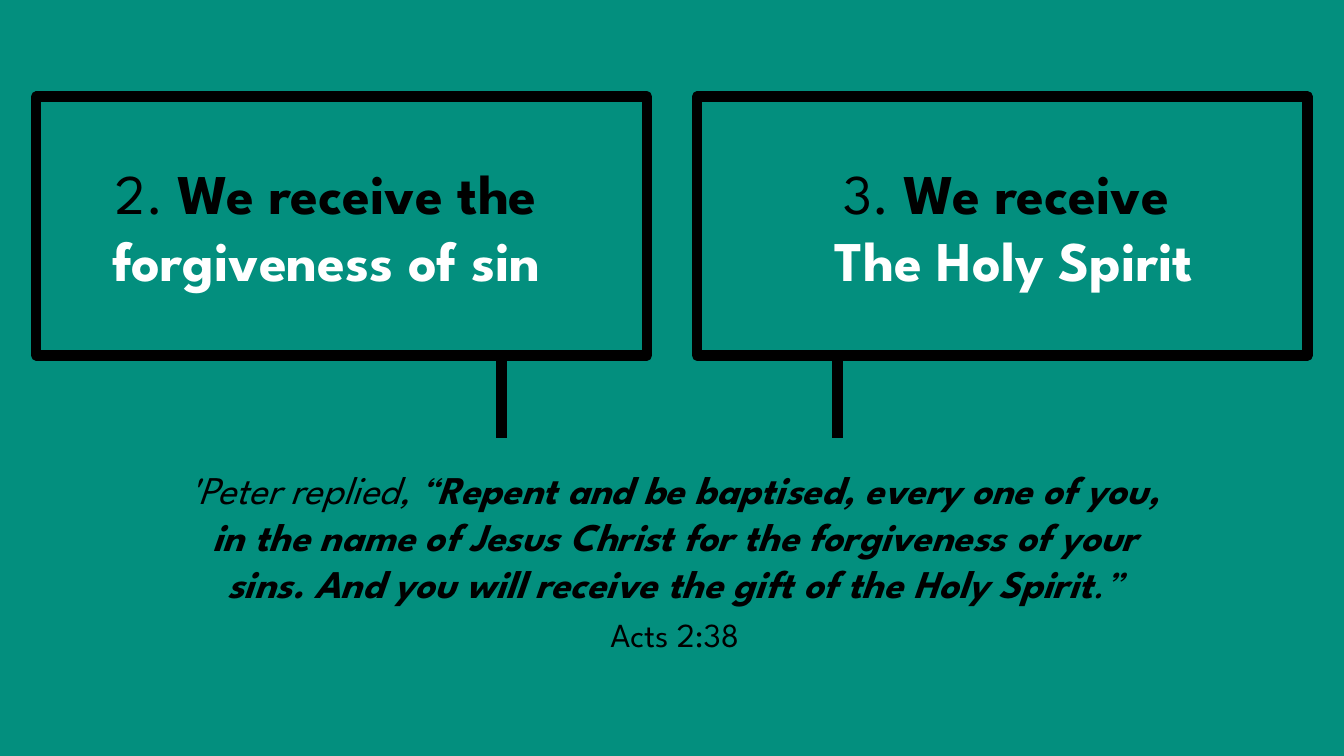
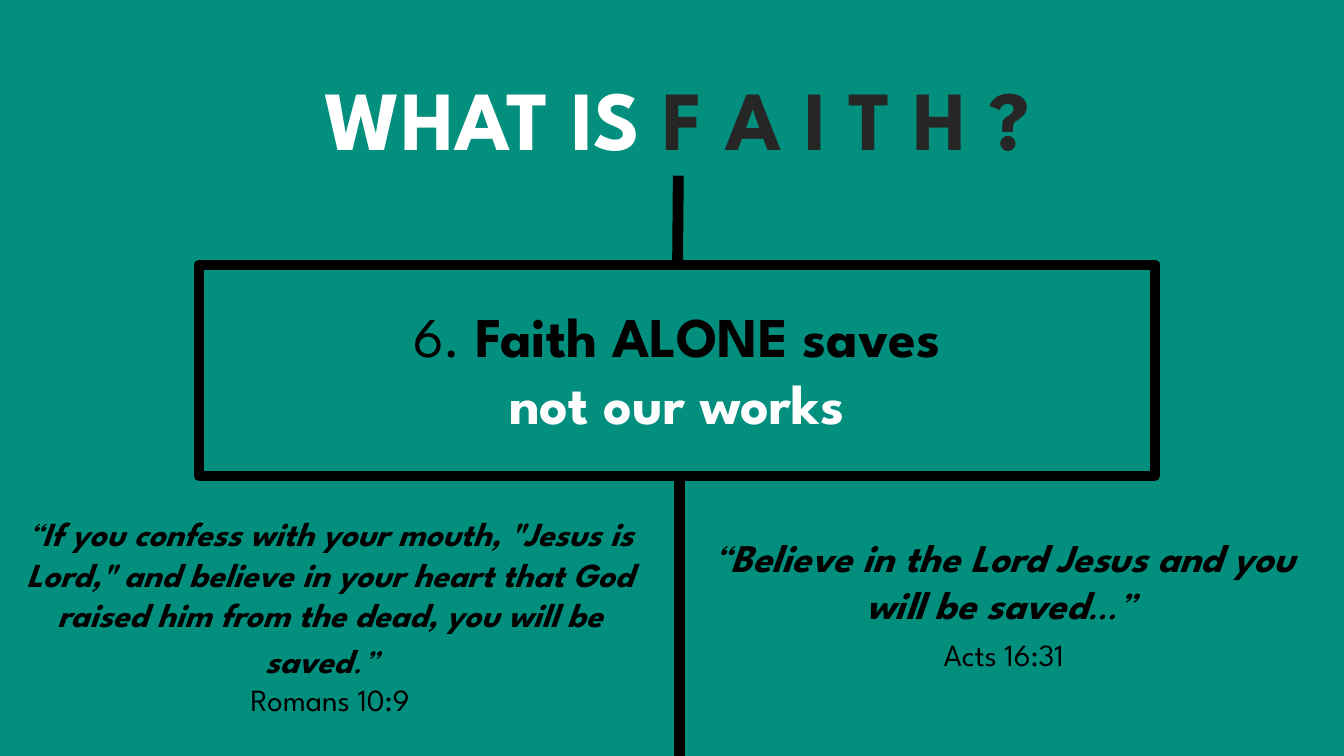
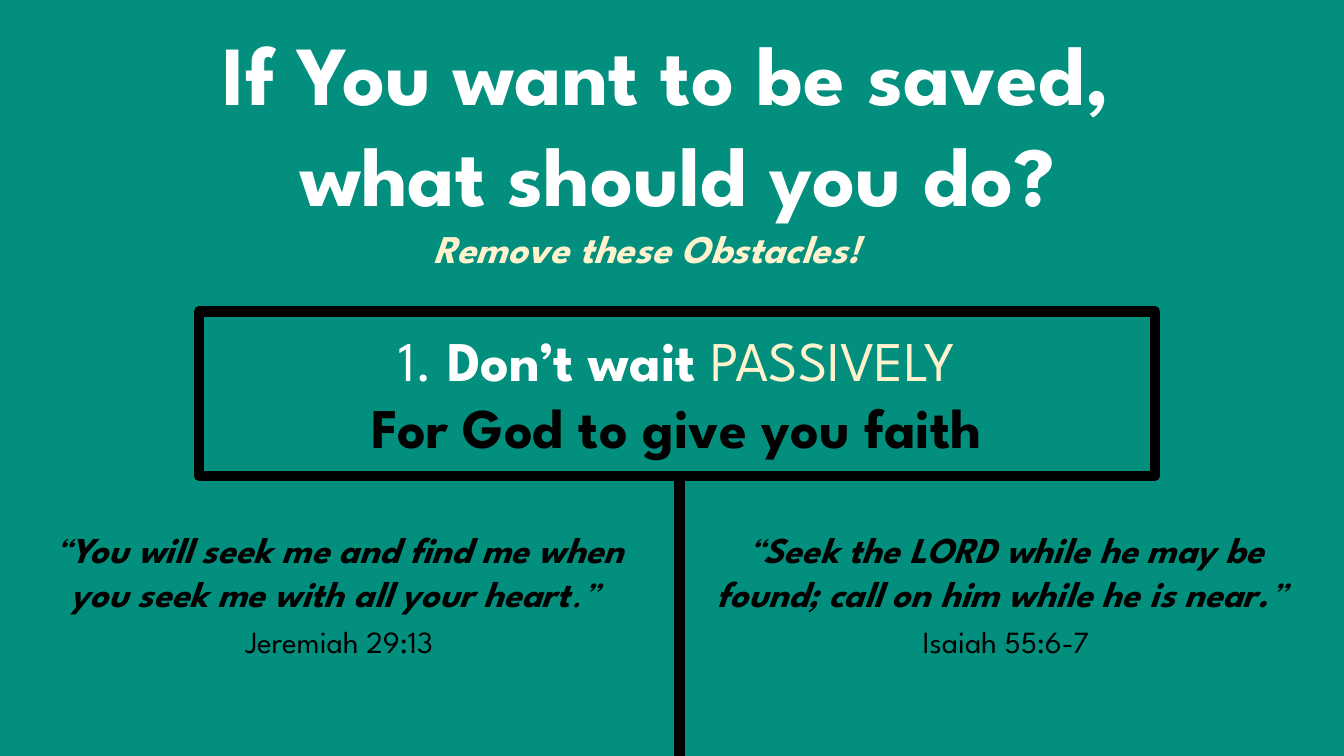
from dataclasses import dataclass

from lxml.etree import SubElement
from pptx import Presentation
from pptx.dml.color import RGBColor
from pptx.enum.shapes import MSO_CONNECTOR, MSO_SHAPE
from pptx.enum.text import MSO_ANCHOR, MSO_AUTO_SIZE, PP_ALIGN
from pptx.oxml.ns import qn
from pptx.util import Pt


@dataclass(frozen=True)
class Theme:
    font: str = "League Spartan"
    filler_font: str = "Calibri"
    background: str = "038F7E"
    ink: str = "000000"
    white: str = "FFFFFF"
    charcoal: str = "262626"
    cream: str = "FFF2CC"
    title_size: int = 60
    heading_size: int = 40
    quote_size: int = 28
    medium_quote_size: int = 26
    small_quote_size: int = 24
    reference_size: int = 22
    frame_width: float = 7.25
    stem_width: float = 7.75


THEME = Theme()
BOLD = {"bold": True}
WHITE = {"color": THEME.white}
CREAM = {"color": THEME.cream}


def line_of(size, *spans, gap=0, align=PP_ALIGN.CENTER, **style):
    return {"size": size, "spans": spans, "gap": gap, "align": align, "style": style}


def title_line(*spans):
    return line_of(THEME.title_size, *spans, **WHITE, **BOLD)


def heading_line(*spans, **style):
    return line_of(THEME.heading_size, *spans, **style)


def verse(opening, words, closing, reference, size=THEME.quote_size,
          reference_size=THEME.reference_size, gap=6, filler=0):
    spans = [(opening, {}), (words, BOLD), (closing, {})]
    if filler:
        spans.append((" ", {"name": THEME.filler_font, "size": filler}))
    return [line_of(size, *spans, italic=True),
            line_of(reference_size, (reference, {}), gap=gap)]


SLIDES = [
    {
        "frames": [(26, 69, 436, 185), (498, 69, 436, 185)],
        "stems": [(358, 253.5, 358, 313), (598, 253.5, 598, 313)],
        "texts": [
            ((41, 109.5, 384.5, 104.5), [
                heading_line(("2. ", {}), ("We receive the", BOLD)),
                heading_line(("forgiveness of sin", {}), **WHITE, **BOLD)]),
            ((532, 109.5, 384.5, 104.5), [
                heading_line(("3. ", {}), ("We receive ", BOLD)),
                heading_line(("The Holy Spirit", {}), **WHITE, **BOLD)]),
            ((121, 329, 722, 177), verse(
                "'Peter replied, “",
                "Repent and be baptised, every one of you, in the name of Jesus Christ "
                "for the forgiveness of your sins. And you will receive the gift of "
                "the Holy Spirit",
                ".”", "Acts 2:38", reference_size=24, gap=5)),
        ],
    },
    {
        "frames": [(142, 189, 683, 151)],
        "stems": [(484.5, 125.5, 484, 189), (485.5, 341, 485.5, 540)],
        "texts": [
            ((50.5, 44, 867, 80), [
                title_line(("WHAT IS ", {}), ("F A I T H ?", {"color": THEME.charcoal}))]),
            ((158.5, 211.5, 650, 104.5), [
                heading_line(("6. ", {}), ("Faith ALONE saves", BOLD)),
                heading_line(("not our works", {}), **WHITE, **BOLD)]),
            ((11.5, 363, 448.5, 155), verse(
                "“",
                'If you confess with your mouth, "Jesus is Lord," and believe in your '
                "heart that God raised him from the dead, you will be saved",
                ".” ", "Romans 10:9", size=THEME.small_quote_size, gap=0, filler=28)),
            ((495.5, 377.5, 443, 108), verse(
                "“", "Believe in the Lord Jesus and you will be saved", "…”",
                "Acts 16:31", filler=18)),
        ],
    },
    {
        "frames": [(142, 222.5, 683, 117.5)],
        "stems": [(485.5, 341, 485.5, 540)],
        "texts": [
            ((50.5, 12, 867, 152.5), [
                title_line(("If You want to be saved, ", {})),
                title_line(("what should you do?", {}))]),
            ((302.5, 157, 365, 41), [
                line_of(THEME.quote_size, ("Remove these Obstacles!", {}),
                        align=PP_ALIGN.LEFT, italic=True, **CREAM, **BOLD)]),
            ((158.5, 229, 650, 104.5), [
                heading_line(("1.", {}), (" Don’t wait ", BOLD), ("PASSIVELY", CREAM), **WHITE),
                heading_line(("For God to give you faith", {}), **BOLD)]),
            ((18, 373, 448.5, 134.5), verse(
                "“", "You will seek me and find me when you seek me with all your heart",
                ".” ", "Jeremiah 29:13", size=THEME.medium_quote_size)),
            ((497, 373, 443, 134.5), verse(
                "“", "Seek the LORD while he may be found; call on him while he is near.",
                "” ", "Isaiah 55:6-7", size=THEME.medium_quote_size)),
        ],
    },
]


def set_font(font, name=None, size=None, color=None, bold=None, italic=None):
    if name:
        font.name = name
    if size:
        font.size = Pt(size)
    if color:
        font.color.rgb = RGBColor.from_string(color)
    if bold is not None:
        font.bold = bold
    if italic is not None:
        font.italic = italic


def place(box, bounds):
    box.left, box.top, box.width, box.height = map(Pt, bounds)


def write(box, lines):
    frame = box.text_frame
    frame.word_wrap = True
    frame.auto_size = MSO_AUTO_SIZE.NONE
    frame.vertical_anchor = MSO_ANCHOR.TOP
    for index, line in enumerate(lines):
        para = frame.add_paragraph() if index else frame.paragraphs[0]
        para.alignment = line["align"]
        para.space_before = Pt(line["gap"])
        base = {"name": THEME.font, "size": line["size"], "color": THEME.ink,
                "bold": False, "italic": False}
        set_font(para.font, **{**base, **line["style"]})
        for text, changes in line["spans"]:
            span = para.add_run()
            span.text = text
            set_font(span.font, **changes)


def add_frame(page, bounds):
    frame = page.shapes.add_shape(MSO_SHAPE.RECTANGLE, *map(Pt, bounds))
    frame.shadow.inherit = False
    frame.fill.background()
    frame.line.color.rgb = RGBColor.from_string(THEME.ink)
    frame.line.width = Pt(THEME.frame_width)


def add_stem(page, ends):
    stem = page.shapes.add_connector(MSO_CONNECTOR.STRAIGHT, *map(Pt, ends))
    stem.line.color.rgb = RGBColor.from_string(THEME.ink)
    stem.line.width = Pt(THEME.stem_width)
    SubElement(stem._element.spPr, qn("a:effectLst"))


def build_slide(deck, content):
    page = deck.slides.add_slide(deck.slide_layouts.get_by_name("Title Only"))
    for bounds in content["frames"]:
        add_frame(page, bounds)
    for ends in content["stems"]:
        add_stem(page, ends)
    for index, (bounds, lines) in enumerate(content["texts"]):
        box = page.shapes.add_textbox(*map(Pt, bounds)) if index else page.shapes.title
        place(box, bounds)
        write(box, lines)


def main():
    deck = Presentation()
    deck.slide_width, deck.slide_height = Pt(960), Pt(540)
    fill = deck.slide_master.background.fill
    fill.solid()
    fill.fore_color.rgb = RGBColor.from_string(THEME.background)
    for content in SLIDES:
        build_slide(deck, content)
    deck.save("out.pptx")


if __name__ == "__main__":
    main()
